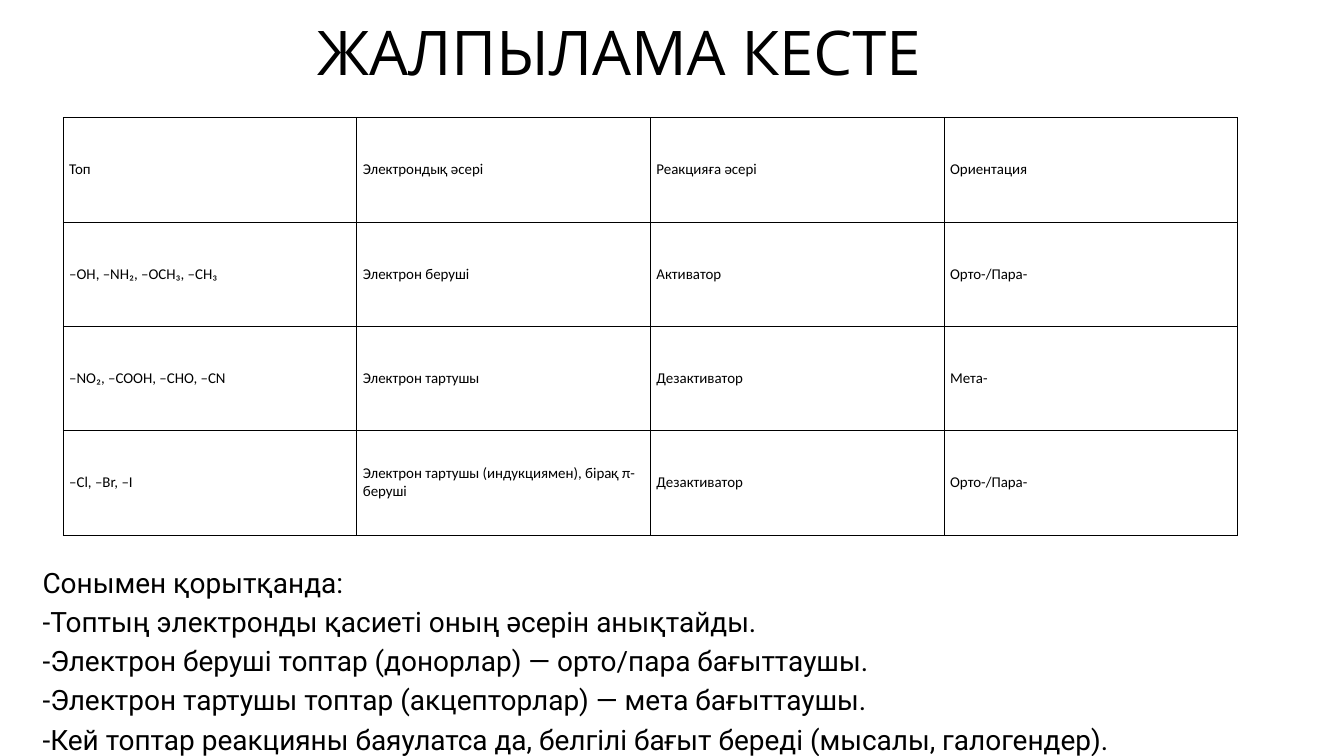
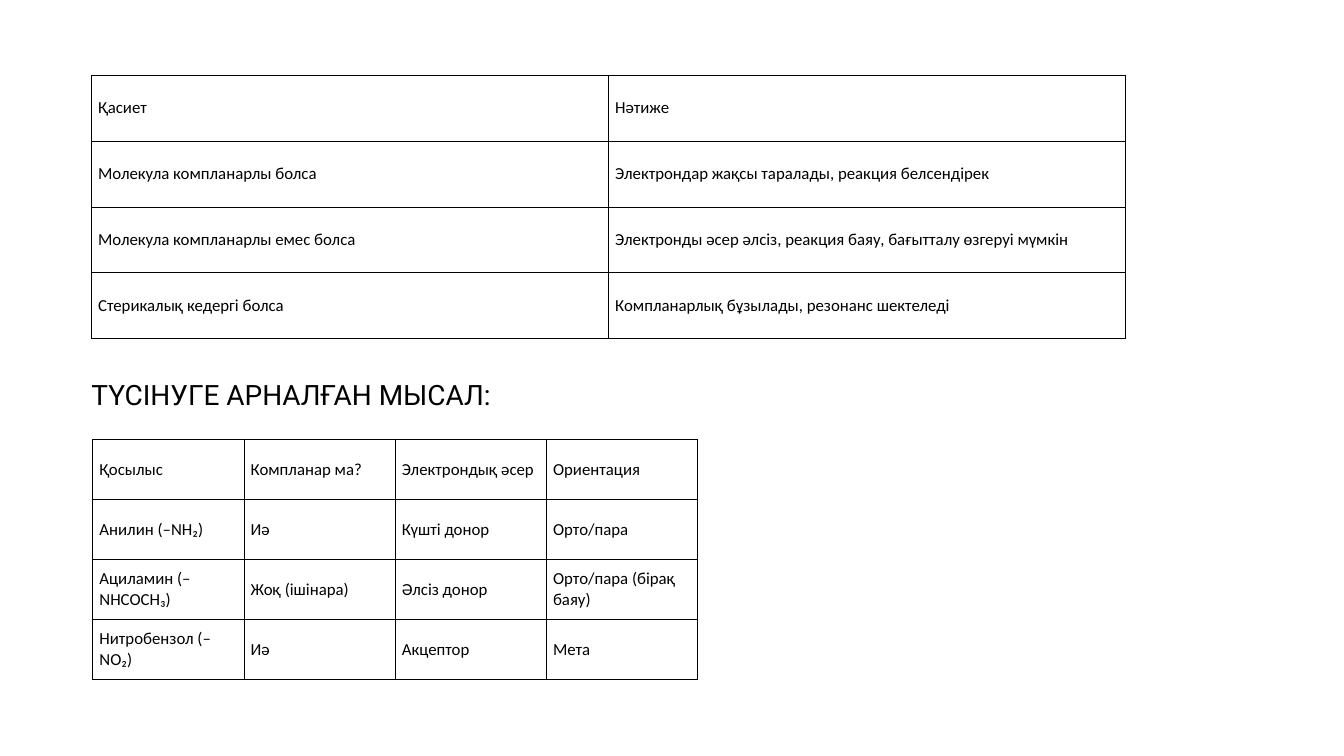
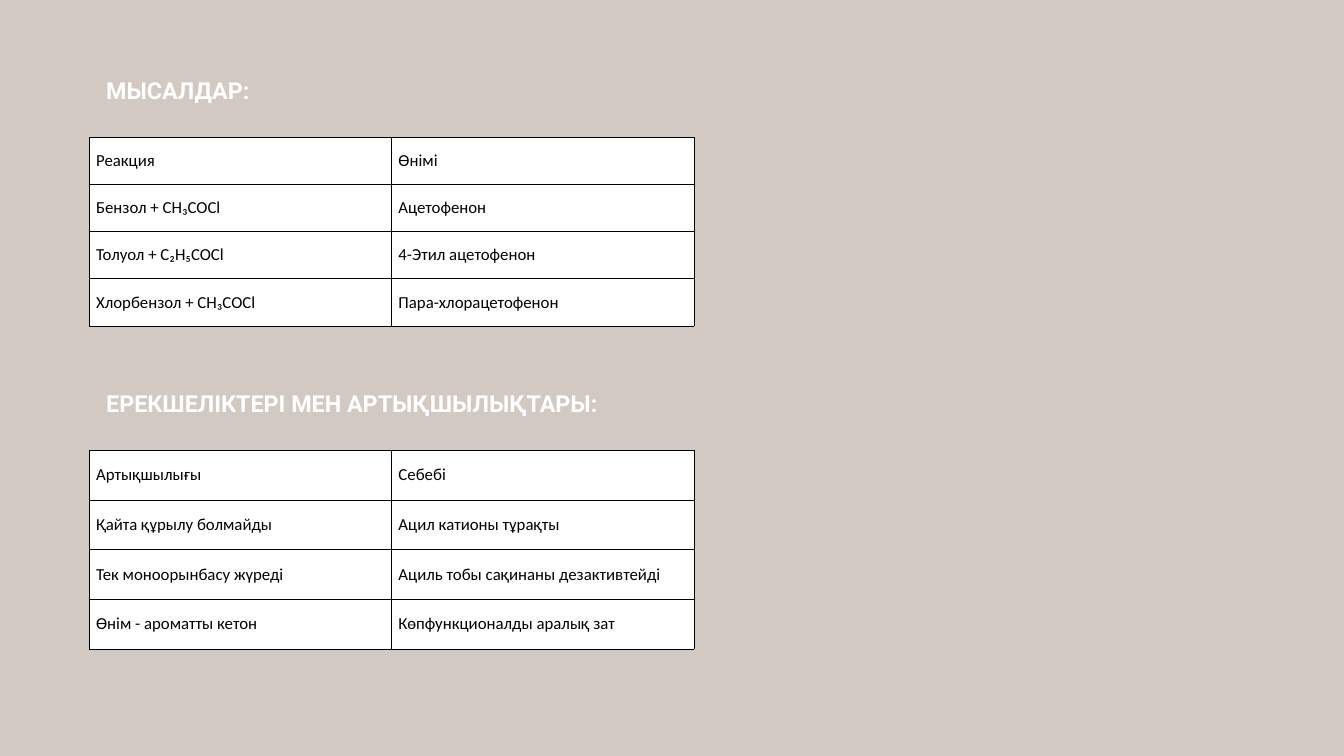
from lxml import etree
from pptx import Presentation
from pptx.dml.color import RGBColor
from pptx.enum.text import MSO_ANCHOR, MSO_AUTO_SIZE
from pptx.oxml.ns import qn
from pptx.util import Inches, Pt

BLACK = RGBColor(0x00, 0x00, 0x00)
WHITE = RGBColor(0xFF, 0xFF, 0xFF)
BEIGE = RGBColor(0xD1, 0xC9, 0xC2)
HEAD_FONT, BODY_FONT, TABLE_FONT = "Open Sans", "Roboto", "Calibri"
BORDER_PT = 0.8

SUMMARY = [
    ["Топ", "Электрондық әсері", "Реакцияға әсері", "Ориентация"],
    ["–OH, –NH₂, –OCH₃, –CH₃", "Электрон беруші", "Активатор", "Орто-/Пара-"],
    ["–NO₂, –COOH, –CHO, –CN", "Электрон тартушы", "Дезактиватор", "Мета-"],
    ["–Cl, –Br, –I", "Электрон тартушы (индукциямен), бірақ π-беруші",
     "Дезактиватор", "Орто-/Пара-"],
]
CONCLUSIONS = [
    " Сонымен қорытқанда:",
    " -Топтың электронды қасиеті оның әсерін анықтайды.",
    " -Электрон беруші топтар (донорлар) — орто/пара бағыттаушы.",
    " -Электрон тартушы топтар (акцепторлар) — мета бағыттаушы.",
    " -Кей топтар реакцияны баяулатса да, белгілі бағыт береді (мысалы, галогендер).",
]
PLANARITY = [
    ["Қасиет", "Нәтиже"],
    ["Молекула компланарлы болса", "Электрондар жақсы таралады, реакция белсендірек"],
    ["Молекула компланарлы емес болса",
     "Электронды әсер әлсіз, реакция баяу, бағытталу өзгеруі мүмкін"],
    ["Стерикалық кедергі болса", "Компланарлық бұзылады, резонанс шектеледі"],
]
COMPOUNDS = [
    ["Қосылыс", "Компланар ма?", "Электрондық әсер", "Ориентация"],
    ["Анилин (–NH₂)", "Иә", "Күшті донор", "Орто/пара"],
    ["Ациламин (–NHCOCH₃)", "Жоқ (ішінара)", "Әлсіз донор", "Орто/пара (бірақ баяу)"],
    ["Нитробензол (–NO₂)", "Иә", "Акцептор", "Мета"],
]
REACTIONS = [
    ["Реакция", "Өнімі"],
    ["Бензол + CH₃COCl", "Ацетофенон"],
    ["Толуол + C₂H₅COCl", "4-Этил ацетофенон"],
    ["Хлорбензол + CH₃COCl", "Пара-хлорацетофенон"],
]
ADVANTAGES = [
    ["Артықшылығы", "Себебі"],
    ["Қайта құрылу болмайды", "Ацил катионы тұрақты"],
    ["Тек моноорынбасу жүреді", "Ациль тобы сақинаны дезактивтейді"],
    ["Өнім - ароматты кетон", "Көпфункционалды аралық зат"],
]


def new_slide(prs, color):
    s = prs.slides.add_slide(prs.slide_layouts[6])
    s.background.fill.solid()
    s.background.fill.fore_color.rgb = color
    return s


def style_run(r, font, size, color, bold=False):
    r.font.name = font
    r.font.size = Pt(size)
    r.font.color.rgb = color
    r.font.bold = bold


def add_text(s, box, lines, size, font=BODY_FONT, color=BLACK, bold=False, leading=1.4):
    tf = s.shapes.add_textbox(*map(Inches, box)).text_frame
    tf.word_wrap = True
    tf.auto_size = MSO_AUTO_SIZE.SHAPE_TO_FIT_TEXT
    tf.margin_left = tf.margin_top = tf.margin_right = tf.margin_bottom = 0
    tf.text = "\n".join(lines)
    for p in tf.paragraphs:
        p.line_spacing = Pt(size * leading)
        style_run(p.runs[0], font, size, color, bold)


def add_borders(cell):
    tc_pr = cell._tc.get_or_add_tcPr()
    for i, side in enumerate(("lnL", "lnR", "lnT", "lnB")):
        ln = etree.Element(qn(f"a:{side}"), w=str(Pt(BORDER_PT)))
        fill = etree.SubElement(ln, qn("a:solidFill"))
        etree.SubElement(fill, qn("a:srgbClr"), val=str(BLACK))
        tc_pr.insert(i, ln)


def add_grid(s, box, rows, size=18, side_margin=0.1):
    left, top, width, height = map(Inches, box)
    n_rows, n_cols = len(rows), len(rows[0])
    table = s.shapes.add_table(n_rows, n_cols, left, top, width, height).table
    for col in table.columns:
        col.width = width // n_cols
    for row, texts in zip(table.rows, rows):
        row.height = height // n_rows
        for cell, text in zip(row.cells, texts):
            cell.text = text
            cell.vertical_anchor = MSO_ANCHOR.MIDDLE
            cell.margin_left = cell.margin_right = Inches(side_margin)
            cell.fill.solid()
            cell.fill.fore_color.rgb = WHITE
            add_borders(cell)
            style_run(cell.text_frame.paragraphs[0].runs[0], TABLE_FONT, size, BLACK)


def add_example_block(s, box, heading, heading_width, rows):
    left, top, width, height = box
    add_text(s, (left + 0.25, top, heading_width, 0.47), [heading], 25,
             color=WHITE, bold=True)
    add_grid(s, (left, top + 0.98, width, height - 0.98), rows)


def summary_slide(prs):
    s = new_slide(prs, WHITE)
    add_text(s, (4.72, 0.21, 10.57, 1.09), ["ЖАЛПЫЛАМА КЕСТЕ"], 66, HEAD_FONT, leading=1.2)
    add_text(s, (0.53, 8.33, 19.27, 3.5), CONCLUSIONS, 30)
    add_grid(s, (0.94, 1.75, 17.48, 6.21), SUMMARY, 16, 0.09)


def planarity_slide(prs):
    s = new_slide(prs, WHITE)
    add_text(s, (1.36, 5.54, 7.09, 0.58), ["ТҮСІНУГЕ АРНАЛҒАН МЫСАЛ:"], 30)
    add_grid(s, (1.36, 1.12, 15.39, 3.92), PLANARITY)
    add_grid(s, (1.38, 6.54, 9, 3.57), COMPOUNDS)


def examples_slide(prs):
    s = new_slide(prs, BEIGE)
    add_example_block(s, (1.33, 1.06, 9, 3.79), "МЫСАЛДАР:", 3.98, REACTIONS)
    add_example_block(s, (1.33, 5.72, 9, 3.94), "ЕРЕКШЕЛІКТЕРІ МЕН АРТЫҚШЫЛЫҚТАРЫ:",
                      10.58, ADVANTAGES)


def main():
    prs = Presentation()
    prs.slide_width, prs.slide_height = Inches(20), Inches(11.25)
    summary_slide(prs)
    planarity_slide(prs)
    examples_slide(prs)
    prs.save("out.pptx")


if __name__ == "__main__":
    main()
